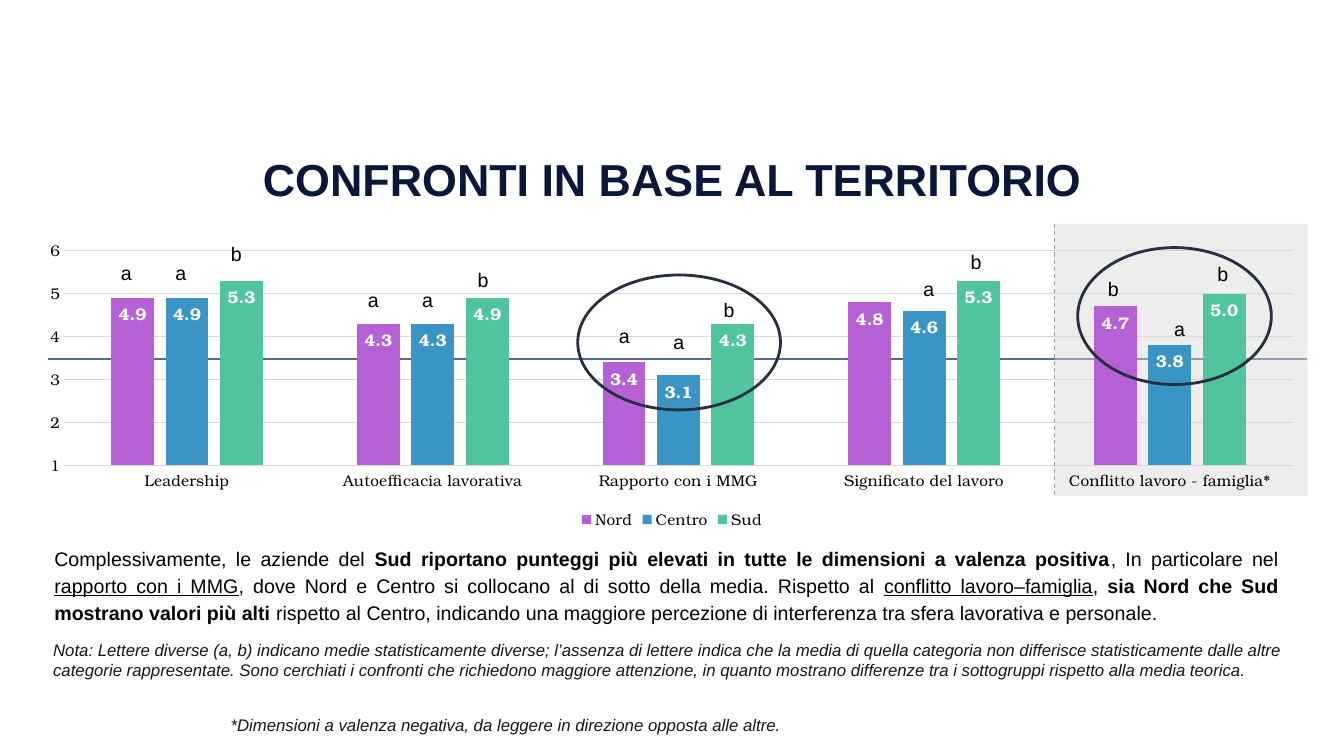
from lxml import etree
from pptx import Presentation
from pptx.chart.data import CategoryChartData
from pptx.dml.color import RGBColor
from pptx.enum.chart import XL_CHART_TYPE, XL_LABEL_POSITION, XL_LEGEND_POSITION, XL_TICK_MARK
from pptx.enum.dml import MSO_LINE
from pptx.enum.shapes import MSO_CONNECTOR, MSO_SHAPE
from pptx.enum.text import MSO_ANCHOR, MSO_AUTO_SIZE, PP_ALIGN
from pptx.oxml.ns import qn
from pptx.util import Cm, Pt

COLUMNS = XL_CHART_TYPE.COLUMN_CLUSTERED
INSIDE_END = XL_LABEL_POSITION.INSIDE_END
BOTTOM = XL_LEGEND_POSITION.BOTTOM
NO_TICK = XL_TICK_MARK.NONE
DASH = MSO_LINE.DASH
STRAIGHT = MSO_CONNECTOR.STRAIGHT
RECTANGLE, OVAL = MSO_SHAPE.RECTANGLE, MSO_SHAPE.OVAL
MIDDLE = MSO_ANCHOR.MIDDLE
GROW = MSO_AUTO_SIZE.SHAPE_TO_FIT_TEXT
CENTER, JUSTIFY = PP_ALIGN.CENTER, PP_ALIGN.JUSTIFY

TEXT_FONT, CHART_FONT = "Arial", "TeX Gyre Bonum"
BLACK, GREY = "000000", "D9D9D9"

DIMENSIONS = ["Leadership", "Autoefficacia lavorativa", "Rapporto con i MMG",
              "Significato del lavoro", "Conflitto lavoro - famiglia*"]
AREAS = [
    ("Nord", "B560D4", [4.9, 4.3, 3.4, 4.8, 4.7]),
    ("Centro", "3B95C4", [4.9, 4.3, 3.1, 4.6, 3.8]),
    ("Sud", "50C49F", [5.3, 4.9, 4.3, 5.3, 5.0]),
]
# Letter, left and top in cm from the corner of the chart
LETTERS = [
    ("a", 2.16, 0.51), ("a", 3.53, 0.51), ("b", 4.93, 0.03),
    ("a", 8.38, 1.19), ("a", 9.75, 1.19), ("b", 11.15, 0.69),
    ("a", 14.71, 2.11), ("a", 16.08, 2.24), ("b", 17.35, 1.45),
    ("a", 22.38, 0.91), ("b", 23.57, 0.23),
    ("b", 27.03, 0.91), ("a", 28.7, 1.93), ("b", 29.79, 0.53),
]
# Left, top, width and height in cm from the corner of the chart
CIRCLES = [(13.92, 0.99, 5.11, 3.4), (26.52, 0.3, 4.88, 3.45)]
# Share of the chart taken by the plot
PLOT_LAYOUT = {"x": 0.03, "y": 0.05, "w": 0.95, "h": 0.72}

TITLE = "CONFRONTI IN BASE AL TERRITORIO"
COMMENT = [
    ("Complessivamente, le aziende del ", ""),
    ("Sud riportano punteggi più elevati in tutte le dimensioni a valenza positiva", "b"),
    (", In particolare nel ", ""),
    ("rapporto con i MMG", "u"),
    (", dove Nord e Centro si collocano al di sotto della media. Rispetto al ", ""),
    ("conflitto lavoro–famiglia", "u"),
    (", ", ""),
    ("sia Nord che Sud mostrano valori più alti ", "b"),
    ("rispetto al Centro, indicando una maggiore percezione di interferenza "
     "tra sfera lavorativa e personale.", ""),
]
NOTE = ("Nota: Lettere diverse (a, b) indicano medie statisticamente diverse; l’assenza di lettere "
        "indica che la media di quella categoria non differisce statisticamente dalle altre "
        "categorie rappresentate. Sono cerchiati i confronti che richiedono maggiore attenzione, "
        "in quanto mostrano differenze tra i sottogruppi rispetto alla media teorica.")
FOOTNOTE = "*Dimensioni a valenza negativa, da leggere in direzione opposta alle altre."


def rgb(color):
    return RGBColor.from_string(color)


def set_font(font, name, size, color, bold=False, italic=False):
    font.name, font.size = name, Pt(size)
    font.color.rgb = rgb(color)
    font.bold, font.italic = bold, italic


def add_text(s, box, runs, size, color=BLACK, italic=False, wrap=True, inset=None):
    """Add a one-paragraph text box from (text, style) runs; style b is bold, u underlined."""
    tf = s.shapes.add_textbox(*map(Cm, box)).text_frame
    tf.word_wrap = wrap
    if inset is None:
        tf.auto_size = GROW
    else:
        tf.margin_left = tf.margin_right = tf.margin_top = tf.margin_bottom = Cm(inset)
    p = tf.paragraphs[0]
    for text, style in runs:
        r = p.add_run()
        r.text = text
        set_font(r.font, TEXT_FONT, size, color, style == "b", italic)
        if style == "u":
            r.font.underline = True
    return tf


def add_line(s, x1, y1, x2, y2, color, width):
    line = s.shapes.add_connector(STRAIGHT, Cm(x1), Cm(y1), Cm(x2), Cm(y2))
    line.line.color.rgb = rgb(color)
    line.line.width = Pt(width)
    etree.SubElement(line._element.spPr, qn("a:effectLst"))
    return line


def add_title(s, box):
    tf = add_text(s, box, [(TITLE, "b")], 32, "091838", inset=0.25)
    tf.vertical_anchor = MIDDLE
    tf.paragraphs[0].alignment = CENTER
    tf.paragraphs[0].line_spacing = 0.85


def add_comment(s, box):
    p = add_text(s, box, COMMENT, 14, inset=0.25).paragraphs[0]
    p.alignment = JUSTIFY
    p.line_spacing = 1.15
    pPr = p._p.get_or_add_pPr()
    pPr.set("marL", str(Cm(0.43)))
    pPr.set("indent", "0")


def add_negative_band(s, x, y):
    sp = s.shapes.add_shape(RECTANGLE, Cm(x + 25.93), Cm(y - 0.3), Cm(6.38), Cm(6.86))
    sp.shadow.inherit = False
    sp.fill.solid()
    sp.fill.fore_color.rgb = rgb(GREY)
    color = sp._element.spPr.find(".//" + qn("a:srgbClr"))
    etree.SubElement(color, qn("a:alpha"), val="45000")
    sp.line.fill.background()


def fix_plot(chart):
    """Hold the plot in place under the letters and circles."""
    plot_area = chart._chartSpace.chart.plotArea
    layout = plot_area.find(qn("c:layout"))
    if layout is None:
        layout = etree.Element(qn("c:layout"))
        plot_area.insert(0, layout)
    manual = etree.SubElement(layout, qn("c:manualLayout"))
    settings = {"layoutTarget": "inner", "xMode": "edge", "yMode": "edge", **PLOT_LAYOUT}
    for tag, value in settings.items():
        etree.SubElement(manual, qn("c:" + tag), val=str(value))


def add_bars(s, box):
    data = CategoryChartData(number_format="#,##0.0")
    data.categories = DIMENSIONS
    for name, _, values in AREAS:
        data.add_series(name, values)
    chart = s.shapes.add_chart(COLUMNS, *map(Cm, box), data).chart
    set_font(chart.font, CHART_FONT, 10, BLACK)
    chart.has_title = False
    chart.has_legend = True
    chart.legend.position = BOTTOM
    chart.legend.include_in_layout = False
    set_font(chart.legend.font, CHART_FONT, 11, BLACK)

    for axis in (chart.category_axis, chart.value_axis):
        axis.major_tick_mark = axis.minor_tick_mark = NO_TICK
        set_font(axis.tick_labels.font, CHART_FONT, 11, BLACK)
    scores = chart.value_axis
    scores.minimum_scale, scores.maximum_scale, scores.major_unit = 1, 6, 1
    scores.tick_labels.number_format = "0"
    scores.tick_labels.number_format_is_linked = False
    scores.format.line.fill.background()
    for line in (chart.category_axis.format.line, scores.major_gridlines.format.line):
        line.color.rgb = rgb(GREY)
        line.width = Pt(0.75)

    plot = chart.plots[0]
    plot.gap_width, plot.overlap = 219, -27
    plot.vary_by_categories = False
    for series, (_, color, _) in zip(plot.series, AREAS):
        series.format.fill.solid()
        series.format.fill.fore_color.rgb = rgb(color)
        labels = series.data_labels
        labels.show_value = True
        labels.position = INSIDE_END
        labels.number_format = "#,##0.0"
        labels.number_format_is_linked = False
        set_font(labels.font, CHART_FONT, 12, "FFFFFF", bold=True)
    fix_plot(chart)


def add_comparison(s, box):
    """Add the bars with the mean line, the shaded band, the letters and the circles."""
    x, y = box[:2]
    add_line(s, x + 0.58, y + 3.1, x + 32.31, y + 3.1, "526A94", 1.5)
    add_negative_band(s, x, y)
    add_bars(s, box)
    border = add_line(s, x + 25.93, y + 6.53, x + 25.93, y - 0.33, "9B9B9B", 0.75)
    border.line.dash_style = DASH
    for letter, left, top in LETTERS:
        add_text(s, (x + left, y + top, 1.09, 0.89), [(letter, "")], 14, wrap=False)
    for left, top, width, height in CIRCLES:
        sp = s.shapes.add_shape(OVAL, Cm(x + left), Cm(y + top), Cm(width), Cm(height))
        sp.shadow.inherit = False
        sp.fill.background()
        sp.line.color.rgb = rgb("253042")
        sp.line.width = Pt(2)


def main():
    prs = Presentation()
    prs.slide_width, prs.slide_height = Cm(33.87), Cm(19.05)
    s = prs.slides.add_slide(prs.slide_layouts[6])
    add_title(s, (3.84, 3.63, 26.21, 1.98))
    add_comparison(s, (0.64, 5.94, 32.59, 7.52))
    add_comment(s, (0.69, 13.44, 31.78, 2.67))
    add_text(s, (1.09, 16, 32.26, 1.27), [(NOTE, "")], 12, "161616", italic=True)
    add_text(s, (5.56, 17.88, 16.94, 0.76), [(FOOTNOTE, "")], 12, "161616", italic=True)
    prs.save("out.pptx")


if __name__ == "__main__":
    main()
